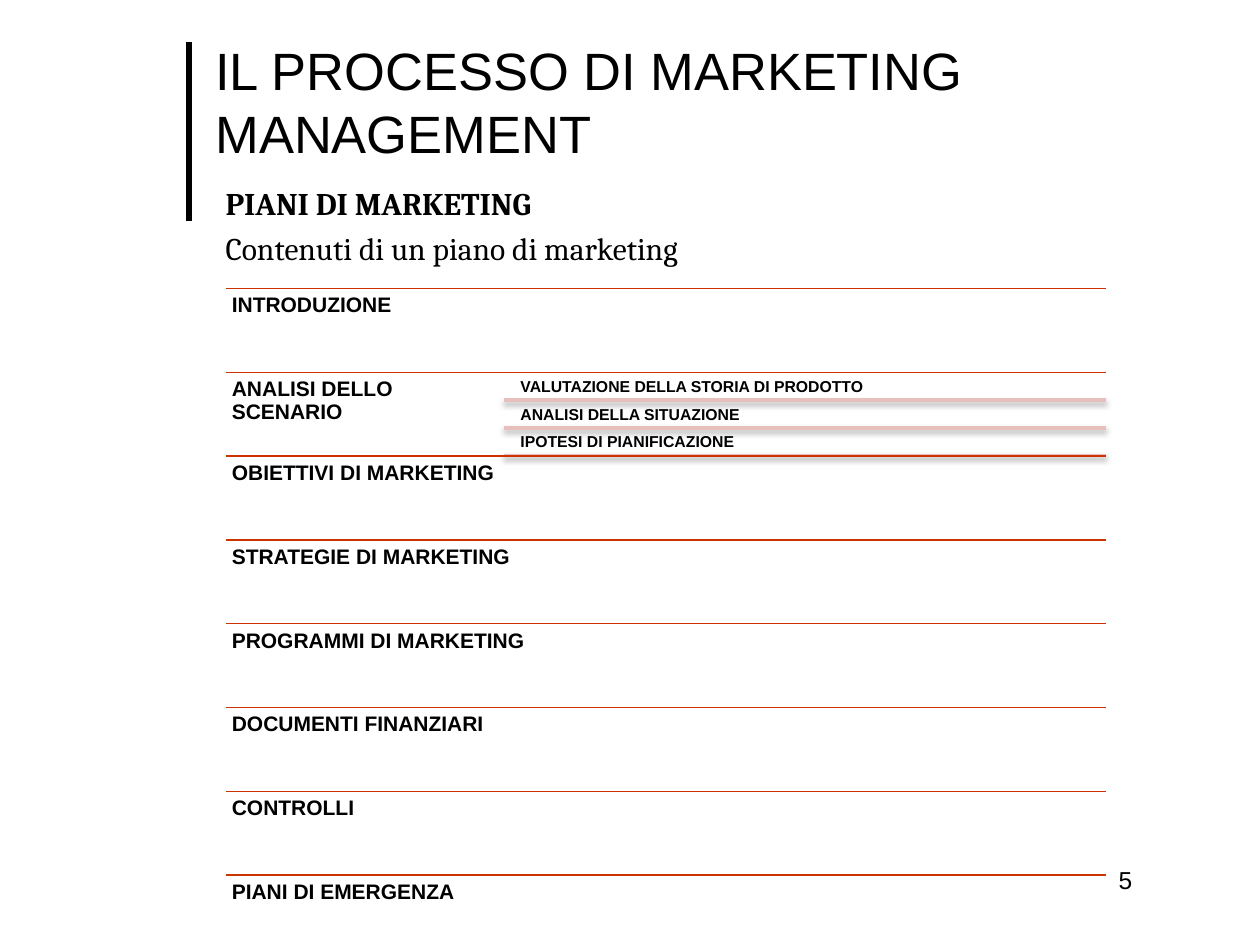
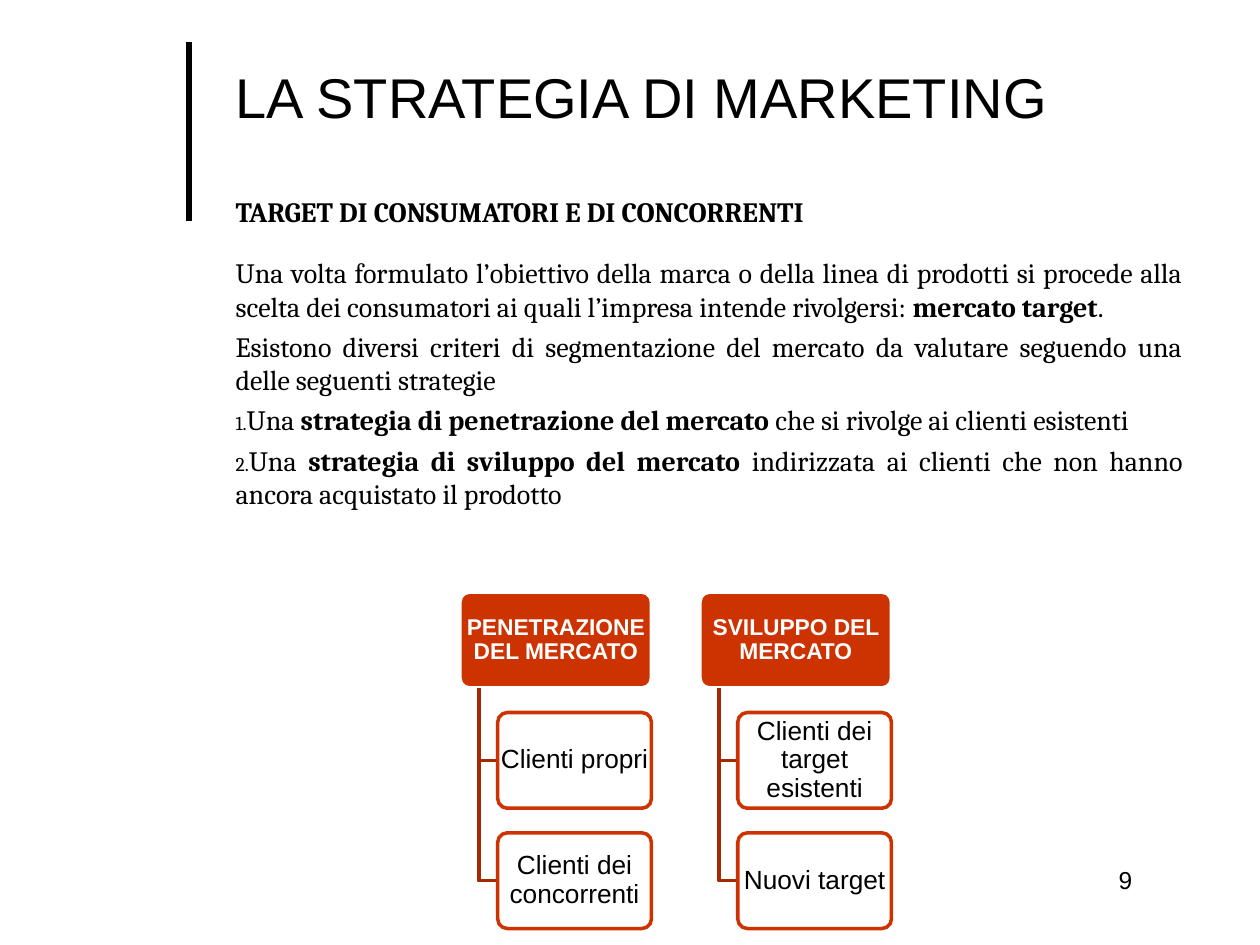
"""Build two slides on marketing plans and marketing strategy."""
from lxml import etree
from pptx import Presentation, util as u
from pptx.dml.color import RGBColor
from pptx.enum import shapes, text
from pptx.oxml import parse_xml
from pptx.oxml.ns import nsdecls, qn

COLORS = {"ink": "000000", "white": "FFFFFF", "accent": "CC3300",
          "branch": "A32900", "pink": "E7BFBD"}
HEADING_FONT, BODY_FONT = "Arial", "Cambria"

presentation = Presentation()
presentation.slide_width, presentation.slide_height = u.Inches(10), u.Inches(7.5)
cell = presentation.slide_width / 100


def write(frame, paragraphs, size, font=HEADING_FONT, color="ink", bold=False,
          align=text.PP_ALIGN.LEFT, anchor=text.MSO_ANCHOR.TOP,
          margins=(1, 0.5), line_spacing=1.0, gaps=(), numbered=()):
    """Fill a text frame; asterisks enclose runs whose weight is switched."""
    frame.word_wrap = True
    frame.auto_size = text.MSO_AUTO_SIZE.NONE
    frame.vertical_anchor = anchor
    frame.margin_left = frame.margin_right = u.Emu(margins[0] * cell)
    frame.margin_top = frame.margin_bottom = u.Emu(margins[1] * cell)
    for index, content in enumerate(paragraphs):
        paragraph = frame.add_paragraph() if index else frame.paragraphs[0]
        paragraph.alignment = align
        paragraph.line_spacing = line_spacing
        paragraph.space_before = u.Pt(gaps[index] if gaps else 0)
        properties = paragraph._p.get_or_add_pPr()
        properties.set("marL", "0")
        properties.set("indent", "0")
        if index in numbered:
            bullet_color = etree.SubElement(properties, qn("a:buClr"))
            etree.SubElement(bullet_color, qn("a:srgbClr"), val=COLORS[color])
            etree.SubElement(properties, qn("a:buSzPct"), val="70000")
            etree.SubElement(properties, qn("a:buFont"), typeface=font)
            etree.SubElement(properties, qn("a:buAutoNum"), type="arabicPeriod")
        else:
            etree.SubElement(properties, qn("a:buNone"))
        for part, words in enumerate(content.split("*")):
            if words:
                run = paragraph.add_run()
                run.text = words
                run.font.size, run.font.name = u.Pt(size), font
                run.font.bold = bold != (part % 2 == 1)
                run.font.color.rgb = RGBColor.from_string(COLORS[color])


def draw_rule(slide, start, end, color, weight, shadow_opacity=0):
    """Draw a straight line between two grid points."""
    rule = slide.shapes.add_connector(
        shapes.MSO_CONNECTOR.STRAIGHT, *(u.Emu(value * cell) for value in start + end))
    rule.line.color.rgb = RGBColor.from_string(COLORS[color])
    rule.line.width = u.Pt(weight)
    shadow = (f'<a:outerShdw blurRad="39370" dist="22860" dir="5400000" rotWithShape="0">'
              f'<a:srgbClr val="{COLORS["ink"]}"><a:alpha val="{shadow_opacity * 1000}"/>'
              f'</a:srgbClr></a:outerShdw>') if shadow_opacity else ""
    rule.element.spPr.append(
        parse_xml(f'<a:effectLst {nsdecls("a")}>{shadow}</a:effectLst>'))
    return rule


page_contents = [
    {"title": "IL PROCESSO DI MARKETING MANAGEMENT", "title_size": 30, "number": "5",
     "title_area": (16.1, 3.6, 83.9, 8.8), "body_area": (16.9, 14.1, 79, 8),
     "body": ["*PIANI DI MARKETING*", "Contenuti di un piano di marketing"],
     "body_size": 18, "gaps": (0, 4), "numbered": ()},
    {"title": "LA STRATEGIA DI MARKETING", "title_size": 32, "number": "9",
     "title_area": (17.7, 3.2, 77.2, 8.8), "body_area": (17.7, 14.9, 77.2, 30),
     "body": [
         "*TARGET DI CONSUMATORI E DI CONCORRENTI*",
         "Una volta formulato l’obiettivo della marca o della linea di prodotti si procede "
         "alla scelta dei consumatori ai quali l’impresa intende rivolgersi: *mercato target*.",
         "Esistono diversi criteri di segmentazione del mercato da valutare seguendo una "
         "delle seguenti strategie",
         "Una *strategia di penetrazione del mercato* che si rivolge ai clienti esistenti",
         "Una *strategia di sviluppo del mercato* indirizzata ai clienti che non hanno "
         "ancora acquistato il prodotto"],
     "body_size": 16, "gaps": (0, 16, 3.7, 3.7, 3.7), "numbered": (3, 4)},
]
slides = []
for page in page_contents:
    slide = presentation.slides.add_slide(presentation.slide_layouts[1])
    slides.append(slide)
    title, body = slide.placeholders
    for placeholder, area in ((title, page["title_area"]), (body, page["body_area"])):
        placeholder.left, placeholder.top, placeholder.width, placeholder.height = (
            u.Emu(value * cell) for value in area)
    write(title.text_frame, [page["title"]], page["title_size"],
          anchor=text.MSO_ANCHOR.MIDDLE)
    write(body.text_frame, page["body"], page["body_size"], font=BODY_FONT,
          align=text.PP_ALIGN.JUSTIFY, gaps=page["gaps"], numbered=page["numbered"])
    number = slide.shapes.add_textbox(
        *(u.Emu(value * cell) for value in (87.8, 68.2, 12.2, 5)))
    write(number.text_frame, [page["number"]], 14)

plan_slide, strategy_slide = slides
title_rule = draw_rule(plan_slide, (15, 17.5), (15, 3.3), "ink", 3)
presentation.slide_master.shapes.element.append(title_rule.element)

plan_left, plan_right, detail_left = 17.9, 87.8, 40
plan_top, plan_row, detail_row = 22.9, 6.65, 2.2
sections = {
    "INTRODUZIONE": [],
    "ANALISI DELLO SCENARIO": ["VALUTAZIONE DELLA STORIA DI PRODOTTO",
                               "ANALISI DELLA SITUAZIONE", "IPOTESI DI PIANIFICAZIONE"],
    "OBIETTIVI DI MARKETING": [],
    "STRATEGIE DI MARKETING": [],
    "PROGRAMMI DI MARKETING": [],
    "DOCUMENTI FINANZIARI": [],
    "CONTROLLI": [],
    "PIANI DI EMERGENZA": [],
}
for row, (section, details) in enumerate(sections.items()):
    top = plan_top + row * plan_row
    draw_rule(plan_slide, (plan_left, top), (plan_right, top), "accent", 0.75, 35)
    label_width = (detail_left if details else plan_right / 1.6) - plan_left
    label = plan_slide.shapes.add_textbox(
        *(u.Emu(value * cell) for value in (plan_left, top, label_width, 5.5)))
    write(label.text_frame, [section], 12, bold=True, margins=(0.5, 0.5), line_spacing=0.9)
    for step, detail in enumerate(details):
        detail_top = top + 0.1 + step * detail_row
        detail_box = plan_slide.shapes.add_textbox(
            *(u.Emu(value * cell) for value in
              (detail_left + 0.9, detail_top, plan_right - detail_left - 0.9, 2.1)))
        write(detail_box.text_frame, [detail], 9, bold=True, margins=(0.4, 0.4),
              line_spacing=0.9)
        draw_rule(plan_slide, (detail_left, detail_top + 2.1),
                  (plan_right, detail_top + 2.1), "pink", 2, 38)

tree_left, tree_top, tree_column, tree_row, card_height = 36.5, 47, 19.05, 9.55, 7.6
strategies = {
    "PENETRAZIONE DEL MERCATO": ["Clienti propri", "Clienti dei concorrenti"],
    "SVILUPPO DEL MERCATO": ["Clienti dei target esistenti", "Nuovi target"],
}
for column, (strategy, targets) in enumerate(strategies.items()):
    left = tree_left + column * tree_column
    for row, caption in enumerate([strategy] + targets):
        top = tree_top + row * tree_row
        indent, width, fill, outline, ink, size = (
            (3, 12.2, "white", "accent", "ink", 15) if row
            else (0, 15.2, "accent", "white", "white", 13))
        if row:
            stem, middle = left + 1.5, top + card_height / 2
            builder = strategy_slide.shapes.build_freeform(
                stem * cell, (tree_top + card_height) * cell)
            builder.add_line_segments(
                [(stem * cell, middle * cell), ((left + indent) * cell, middle * cell)],
                close=False)
            branch = builder.convert_to_shape()
            branch.shadow.inherit = False
            branch.fill.background()
            branch.line.color.rgb = RGBColor.from_string(COLORS["branch"])
            branch.line.width = u.Pt(2)
        card = strategy_slide.shapes.add_shape(
            shapes.MSO_SHAPE.ROUNDED_RECTANGLE,
            *(u.Emu(value * cell) for value in (left + indent, top, width, card_height)))
        card.adjustments[0] = 0.1
        card.shadow.inherit = False
        card.fill.solid()
        card.fill.fore_color.rgb = RGBColor.from_string(COLORS[fill])
        card.line.color.rgb = RGBColor.from_string(COLORS[outline])
        card.line.width = u.Pt(2)
        write(card.text_frame, [caption], size, color=ink, bold=not row,
              align=text.PP_ALIGN.CENTER, anchor=text.MSO_ANCHOR.MIDDLE,
              margins=(0, 0.2), line_spacing=0.9)

presentation.save("out.pptx")
